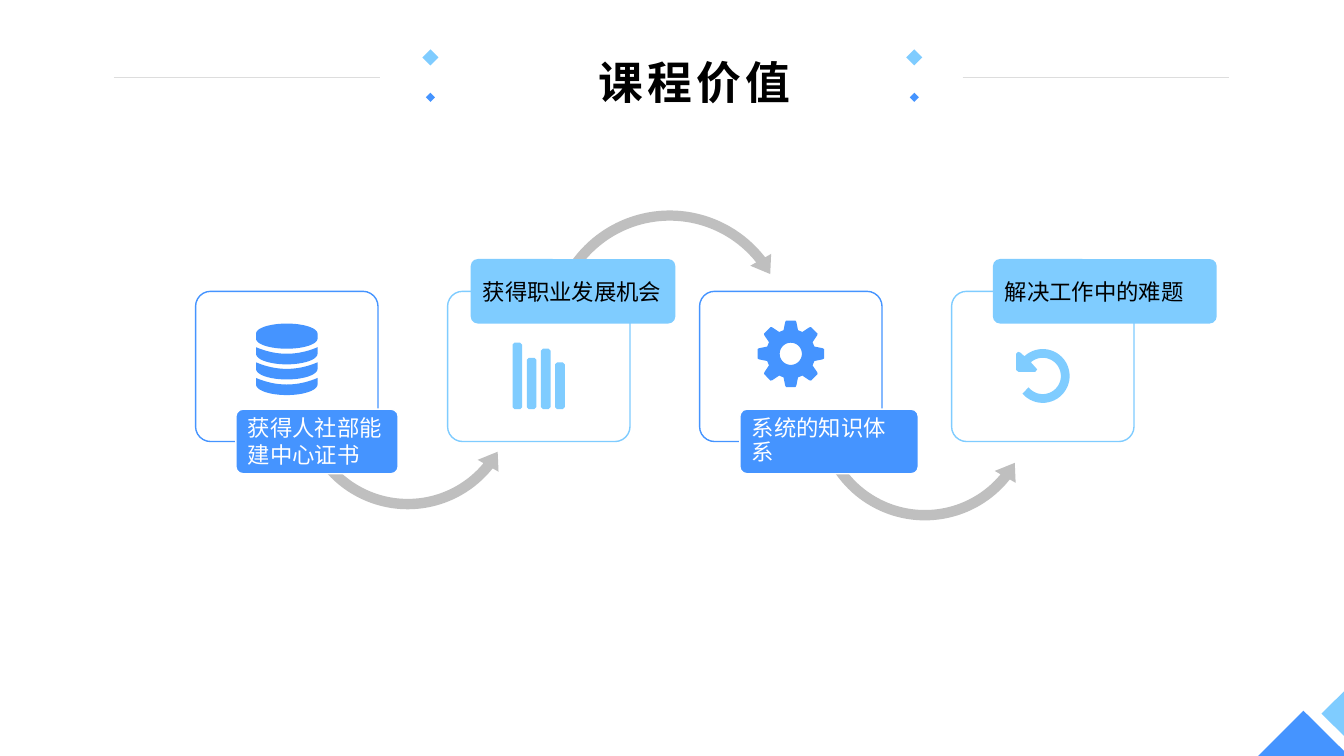
import math
from dataclasses import dataclass
from typing import Any, Callable, Optional

import lxml.etree
import pptx
import pptx.dml.color
import pptx.enum.shapes
import pptx.enum.text
import pptx.oxml.ns
import pptx.util

RGBColor = pptx.dml.color.RGBColor
BLUE = RGBColor(0x45, 0x94, 0xFF)
SKY = RGBColor(0x7F, 0xCC, 0xFF)
GREY = RGBColor(0xBF, 0xBF, 0xBF)
RULE_GREY = RGBColor(0xDD, 0xDD, 0xDD)
WHITE = RGBColor(0xFF, 0xFF, 0xFF)
BLACK = RGBColor(0x00, 0x00, 0x00)
FONT = "Noto Sans CJK SC"

# Grid of square cells, ten to the inch
CELL = pptx.util.Inches(0.1)
COLUMNS, ROWS = 133.33, 75
FRAME_LEFT, FRAME_TOP, FRAME_PITCH = 19.4, 28.9, 25
FRAME_WIDTH, FRAME_HEIGHT = 18.1, 14.9
LABEL_HEIGHT = 6.4

Preset = pptx.enum.shapes.MSO_SHAPE
Anchor = pptx.enum.text.MSO_ANCHOR
Align = pptx.enum.text.PP_ALIGN
Contour = list[tuple[float, float]]


@dataclass(frozen=True)
class Step:
    text: str
    color: RGBColor
    text_color: RGBColor
    label_offset: float
    label_top: float
    label_width: float
    icon: Callable[[], list[Contour]]
    icon_rise: float
    outline: Optional[RGBColor] = None
    line_spacing: float = 1.0


@dataclass(frozen=True)
class FlowArrow:
    preset: Any
    left: float
    top: float
    size: float
    adjustments: tuple[float, ...]


def cells(*lengths: float) -> list[int]:
    return [round(length * CELL) for length in lengths]


def apply_format(target: Any, values: dict[str, Any]) -> None:
    for name, value in values.items():
        setattr(target, name, value)


def paint(shape: Any, fill: Optional[RGBColor], outline: Optional[RGBColor] = None) -> None:
    shape.shadow.inherit = False
    for part, color in ((shape.fill, fill), (shape.line.fill, outline)):
        if color is None:
            part.background()
        else:
            part.solid()
            part.fore_color.rgb = color
    if outline is not None:
        shape.line.width = pptx.util.Pt(1)


def draw_preset(slide: Any, preset: Any, box: tuple[float, ...], fill: Optional[RGBColor],
                outline: Optional[RGBColor] = None, adjustments: tuple[float, ...] = ()) -> Any:
    shape = slide.shapes.add_shape(preset, *cells(*box))
    for index, value in enumerate(adjustments):
        shape.adjustments[index] = value
    paint(shape, fill, outline)
    return shape


def draw_outline(slide: Any, contours: list[Contour], fill: RGBColor,
                 x: float = 0, y: float = 0) -> None:
    moved = [[tuple(cells(x + px, y + py)) for px, py in contour] for contour in contours]
    builder = slide.shapes.build_freeform(*moved[0][0], scale=1.0)
    for index, contour in enumerate(moved):
        if index:
            builder.move_to(*contour[0])
        builder.add_line_segments(contour[1:], close=True)
    paint(builder.convert_to_shape(), fill)


def write(frame: Any, text: str, size: float, color: RGBColor, bold: bool = False,
          tracking: int = 0, line_spacing: float = 1.0) -> None:
    paragraph = frame.paragraphs[0]
    apply_format(paragraph, {"alignment": Align.LEFT, "line_spacing": line_spacing})
    run = paragraph.add_run()
    run.text = text
    run.font.color.rgb = color
    apply_format(run.font, {"name": FONT, "size": pptx.util.Pt(size), "bold": bold})
    properties = run._r.get_or_add_rPr()
    properties.set("spc", str(tracking))
    lxml.etree.SubElement(properties, pptx.oxml.ns.qn("a:ea")).set("typeface", FONT)


# Icon outlines, measured in cells from the icon's centre
def arc(radius: float, start: float, end: float, count: int = 40) -> Contour:
    angles = [math.radians(start + (end - start) * i / count) for i in range(count + 1)]
    return [(radius * math.cos(a), radius * math.sin(a)) for a in angles]


def database_icon() -> list[Contour]:
    def edge(y: float, sag: float, power: float) -> Contour:
        turns = [math.cos(math.pi * i / 24) for i in range(25)]
        return [(3.05 * u, y + sag * max(0, 1 - u * u) ** power) for u in turns]

    lid = edge(-2.55, -1, 0.5) + edge(-2.05, 1, 0.5)[::-1]
    discs = [edge(y, 0.65, 1) + edge(y + 0.65, 1.05, 0.5)[::-1] for y in (-1.2, 0.3, 1.85)]
    return [lid, *discs]


def bars_icon() -> list[Contour]:
    width, bottom, corner = 0.95, 3.3, 0.2
    bars = []
    for index, top in enumerate((-3.3, -1.8, -2.7, -1.35)):
        left = -2.6 + 1.41 * index
        right = left + width
        bars.append([(left, top + corner), (left + corner, top), (right - corner, top),
                     (right, top + corner), (right, bottom - corner),
                     (right - corner, bottom), (left + corner, bottom),
                     (left, bottom - corner)])
    return bars


def gear_icon() -> list[Contour]:
    tooth = ((-17, 2.45), (-10, 3.2), (-8, 3.33), (8, 3.33), (10, 3.2), (17, 2.45))
    teeth = [arc(radius, 45 * index + turn, 0, 1)[0]
             for index in range(8) for turn, radius in tooth]
    return [teeth, arc(1.1, 360, 0)]


def undo_icon() -> list[Contour]:
    head = [(-0.55, -0.65), (-0.75, -0.4), (-2.4, -0.4), (-2.65, -0.6),
            (-2.65, -2.2), (-2.45, -2.4), (-2.2, -2.3)]
    return [arc(2.67, 139, -133) + head[::-1] + arc(1.8, -131, 141)]


STEPS = (
    Step("获得人社部能建中心证书", BLUE, WHITE, 4, 40.6, 16.1, database_icon, -0.7, WHITE),
    Step("获得职业发展机会", SKY, BLACK, 2.3, 25.7, 20.3, bars_icon, 0.95),
    Step("系统的知识体系", BLUE, WHITE, 4, 40.6, 17.7, gear_icon, -1.25, WHITE, 0.9),
    Step("解决工作中的难题", SKY, BLACK, 4.1, 25.7, 22.2, undo_icon, 0.95),
)
LOWER_BEND = (0.045, 5.658, 23.414, 90.245, 0.052)
UPPER_BEND = (0.04, 5.09, 193.155, 125.755, 0.047)
ARROWS = (
    FlowArrow(Preset.LEFT_CIRCULAR_ARROW, 80.3, 29.4, 22.9, LOWER_BEND),
    FlowArrow(Preset.LEFT_CIRCULAR_ARROW, 29, 28.3, 22.9, LOWER_BEND),
    FlowArrow(Preset.CIRCULAR_ARROW, 53.8, 20.2, 25.3, UPPER_BEND),
)


def draw_decoration(slide: Any) -> None:
    # Diamonds on both sides of the title
    for centre in (42.7, 90.7):
        for top, size, color in ((4.9, 1.6, SKY), (9.2, 0.9, BLUE)):
            draw_preset(slide, Preset.DIAMOND, (centre - size / 2, top, size, size), color)
    # Corner triangles
    draw_outline(slide, [[(COLUMNS, 68.6), (COLUMNS, 73), (131.1, 70.8)]], SKY)
    draw_outline(slide, [[(129.3, 70.5), (COLUMNS, 74.5), (COLUMNS, ROWS), (124.8, ROWS)]], BLUE)
    # Rules beside the title
    for left in (11.3, 95.5):
        rule = slide.shapes.add_connector(pptx.enum.shapes.MSO_CONNECTOR.STRAIGHT,
                                          *cells(left, 7.7, left + 26.4, 7.7))
        rule.line.color.rgb = RULE_GREY
        rule.line.width = pptx.util.Pt(0.5)
        lxml.etree.SubElement(rule._element.spPr, pptx.oxml.ns.qn("a:effectLst"))


def draw_title(slide: Any) -> None:
    title = slide.shapes.title
    apply_format(title, dict(zip(("left", "top", "width", "height"),
                                 cells(58.4, 4.9, 21.4, 6.4))))
    apply_format(title.text_frame, {
        "word_wrap": False, "vertical_anchor": Anchor.TOP,
        "auto_size": pptx.enum.text.MSO_AUTO_SIZE.SHAPE_TO_FIT_TEXT})
    write(title.text_frame, "课程价值", 32, BLACK, bold=True, tracking=300)


def draw_step(slide: Any, index: int, step: Step) -> None:
    left = FRAME_LEFT + FRAME_PITCH * index
    draw_preset(slide, Preset.ROUNDED_RECTANGLE, (left, FRAME_TOP, FRAME_WIDTH, FRAME_HEIGHT),
                None, step.color, (0.1,))
    label = draw_preset(slide, Preset.ROUNDED_RECTANGLE,
                        (left + step.label_offset, step.label_top, step.label_width, LABEL_HEIGHT),
                        step.color, step.outline, (0.11,))
    side, edge = cells(1, 0.7)
    apply_format(label.text_frame, {
        "word_wrap": True, "vertical_anchor": Anchor.MIDDLE, "margin_left": side,
        "margin_right": side, "margin_top": edge, "margin_bottom": edge})
    write(label.text_frame, step.text, 16, step.text_color, line_spacing=step.line_spacing)
    draw_outline(slide, step.icon(), step.color, left + FRAME_WIDTH / 2,
                 FRAME_TOP + FRAME_HEIGHT / 2 + step.icon_rise)


def main() -> None:
    deck = pptx.Presentation()
    deck.slide_width, deck.slide_height = cells(COLUMNS, ROWS)
    slide = deck.slides.add_slide(deck.slide_layouts[5])
    draw_decoration(slide)
    draw_title(slide)
    for arrow in ARROWS:
        draw_preset(slide, arrow.preset, (arrow.left, arrow.top, arrow.size, arrow.size),
                    GREY, adjustments=arrow.adjustments)
    for index, step in enumerate(STEPS):
        draw_step(slide, index, step)
    deck.save("out.pptx")


if __name__ == "__main__":
    main()
